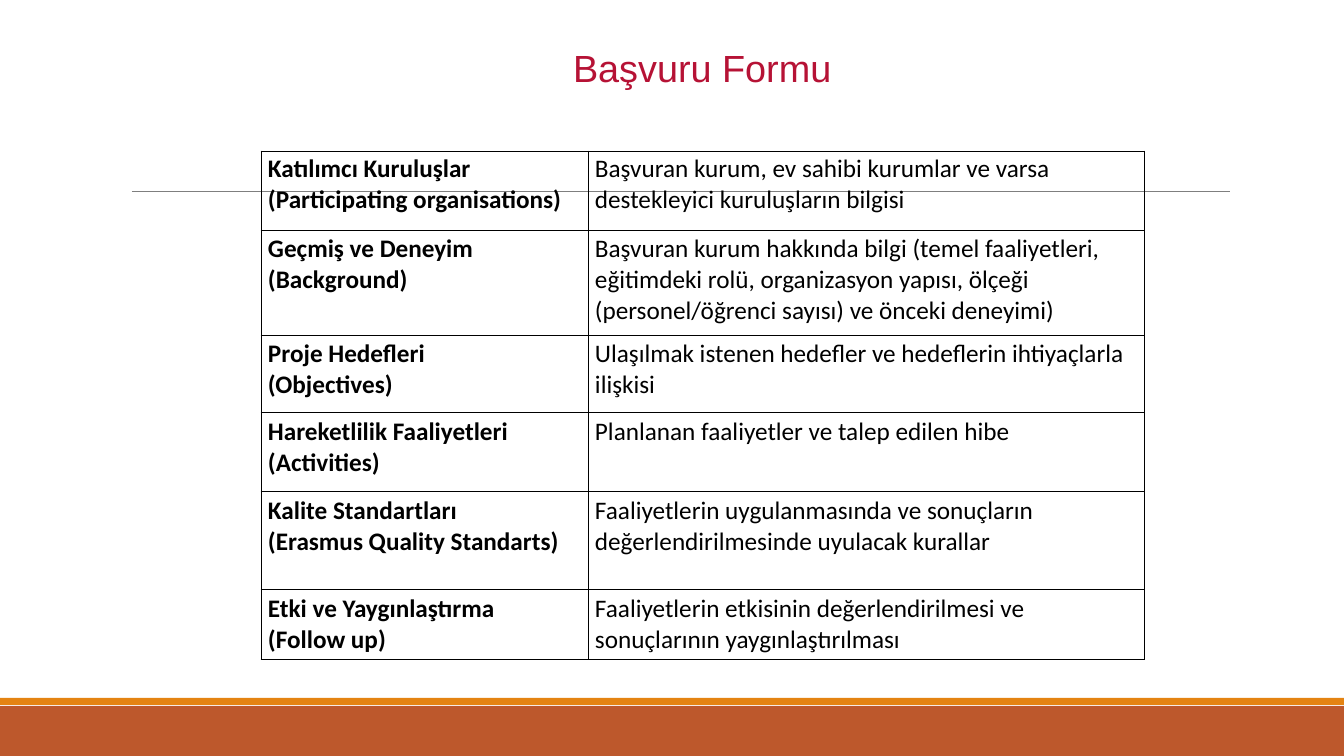
import pptx
import pptx.dml.color
import pptx.enum.shapes
import pptx.enum.text
import pptx.oxml
import pptx.oxml.ns
import pptx.util

PX = 12095
COLUMNS = [327, 556]
ROWS = [
    (79, "Katılımcı Kuruluşlar (Participating organisations)",
     "Başvuran kurum, ev sahibi kurumlar ve varsa destekleyici kuruluşların bilgisi"),
    (105, "Geçmiş ve Deneyim\n(Background)",
     "Başvuran kurum hakkında bilgi (temel faaliyetleri, eğitimdeki rolü, "
     "organizasyon yapısı, ölçeği (personel/öğrenci sayısı) ve önceki deneyimi)"),
    (78, "Proje Hedefleri\v(Objectives)",
     "Ulaşılmak istenen hedefler ve hedeflerin ihtiyaçlarla ilişkisi"),
    (79, "Hareketlilik Faaliyetleri\n(Activities)",
     "Planlanan faaliyetler ve talep edilen hibe"),
    (98, "Kalite Standartları\n(Erasmus Quality Standarts)",
     "Faaliyetlerin uygulanmasında ve sonuçların değerlendirilmesinde uyulacak kurallar"),
    (70, "Etki ve Yaygınlaştırma\n(Follow up)",
     "Faaliyetlerin etkisinin değerlendirilmesi ve\nsonuçlarının yaygınlaştırılması"),
]


def px(*lengths):
    """Turn pixel lengths into a list of EMU lengths."""
    return [pptx.util.Emu(length * PX) for length in lengths]


def paint(color_format, value):
    """Set a colour from a hex string."""
    color_format.rgb = pptx.dml.color.RGBColor.from_string(value)


def style_text(frame, font_name, size, color, bold=False):
    """Format every run of a text frame."""
    for para in frame.paragraphs:
        for span in para.runs:
            span.font.name = font_name
            span.font.size = pptx.util.Pt(size)
            span.font.bold = bold
            paint(span.font.color, color)


def add_band(page, left, top, width, height, color):
    """Add a plain filled band."""
    band = page.shapes.add_shape(
        pptx.enum.shapes.MSO_SHAPE.RECTANGLE, *px(left, top, width, height))
    band.shadow.inherit = False
    band.fill.solid()
    paint(band.fill.fore_color, color)
    band.line.fill.background()


def add_rule(page, left, top, width):
    """Add the thin grey horizontal rule."""
    rule = page.shapes.add_connector(
        pptx.enum.shapes.MSO_CONNECTOR.STRAIGHT, *px(left, top, left + width, top))
    rule.line.width = pptx.util.Pt(0.75)
    paint(rule.line.color, "7F7F7F")
    pptx.oxml.ns.qn("a:effectLst")
    rule.element.spPr.append(pptx.oxml.parse_xml(
        f'<a:effectLst {pptx.oxml.ns.nsdecls("a")}/>'))


def add_title(page, left, top, width, height):
    """Add the slide title."""
    box = page.shapes.add_textbox(*px(left, top, width, height))
    frame = box.text_frame
    frame.margin_left, frame.margin_top, frame.margin_right, frame.margin_bottom = px(1, 1, 0, 0)
    frame.vertical_anchor = pptx.enum.text.MSO_ANCHOR.BOTTOM
    frame.word_wrap = False
    frame.text = "Başvuru Formu"
    style_text(frame, "Arial", 36, "B61235")


def outline_cell(cell, color):
    """Draw a one-point border on all four sides of a cell."""
    properties = cell._tc.get_or_add_tcPr()
    for side in ("lnL", "lnR", "lnT", "lnB"):
        properties.append(pptx.oxml.parse_xml(
            f'<a:{side} {pptx.oxml.ns.nsdecls("a")} w="12700"><a:solidFill>'
            f'<a:srgbClr val="{color}"/></a:solidFill></a:{side}>'))


def fill_cell(cell, text, bold, top_margin):
    """Write one bordered, transparent table cell."""
    cell.margin_left, cell.margin_top, cell.margin_right, cell.margin_bottom = px(
        7, top_margin, 0, 0)
    cell.text_frame.text = text
    style_text(cell.text_frame, "Calibri", 24, "000000", bold)
    outline_cell(cell, "000000")
    cell.fill.background()


def add_form_table(page, left, top):
    """Add the table of form sections and their explanations."""
    height = sum(row[0] for row in ROWS)
    table = page.shapes.add_table(
        len(ROWS), len(COLUMNS), *px(left, top, sum(COLUMNS), height)).table
    table.first_row = table.horz_banding = False
    for column, width in zip(table.columns, px(*COLUMNS)):
        column.width = width
    for index, (row_height, *texts) in enumerate(ROWS):
        table.rows[index].height = px(row_height)[0]
        for column, text in enumerate(texts):
            fill_cell(table.cell(index, column), text, column == 0, 4 if index else 3)


def build_page(page, width, height):
    """Place all parts of the form slide."""
    add_band(page, 0, height - 50, width, 50, "BD582C")
    add_band(page, 0, height - 58, width, 7, "E48312")
    add_rule(page, 132, 191, 1098)
    add_title(page, 572, 43, 261, 47)
    add_form_table(page, 261, 151)


def main():
    """Build and save the deck."""
    deck = pptx.Presentation()
    width, height = 1344, 756
    deck.slide_width, deck.slide_height = px(width, height)
    page = deck.slides.add_slide(deck.slide_layouts[6])
    build_page(page, width, height)
    deck.save("out.pptx")


if __name__ == "__main__":
    main()
